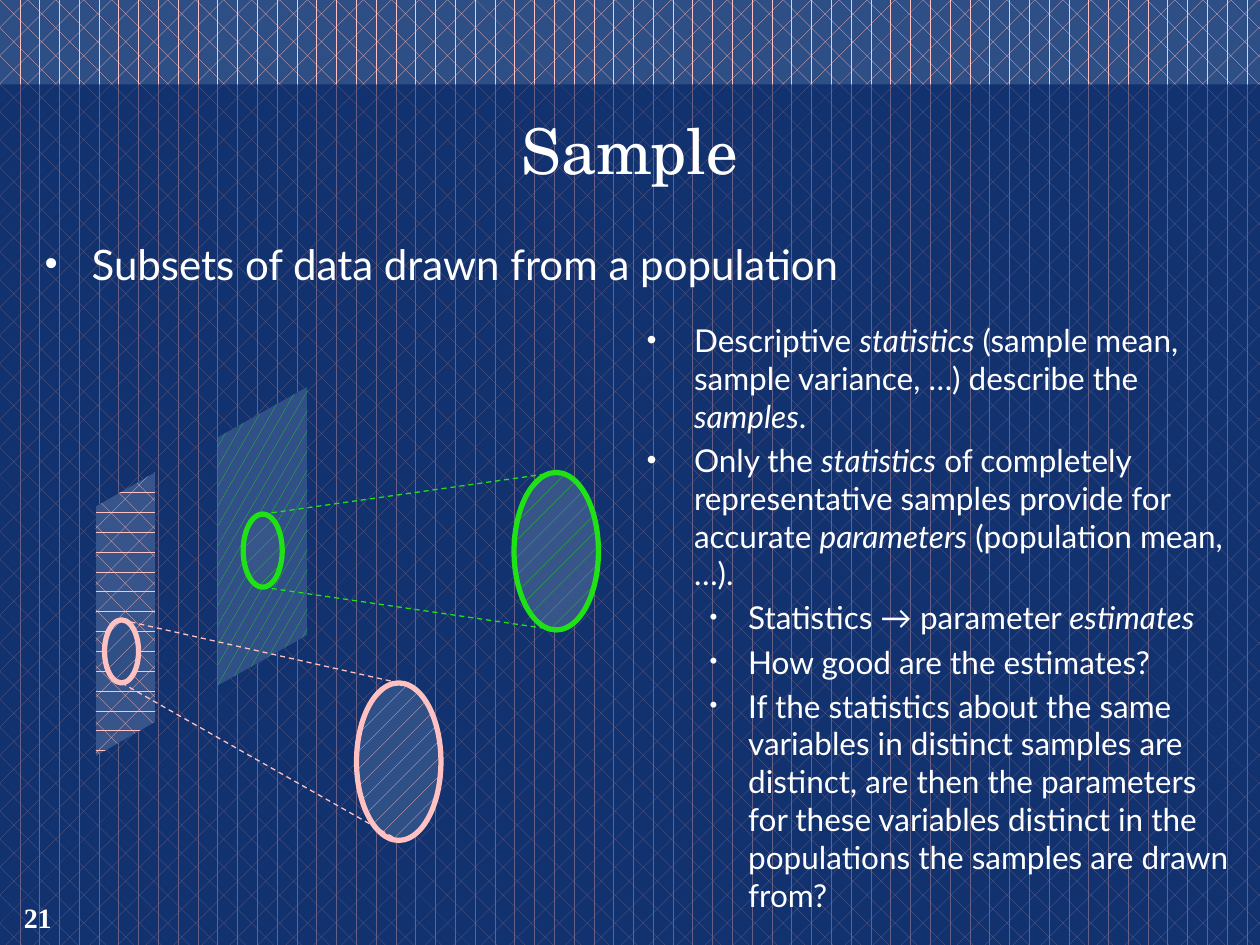
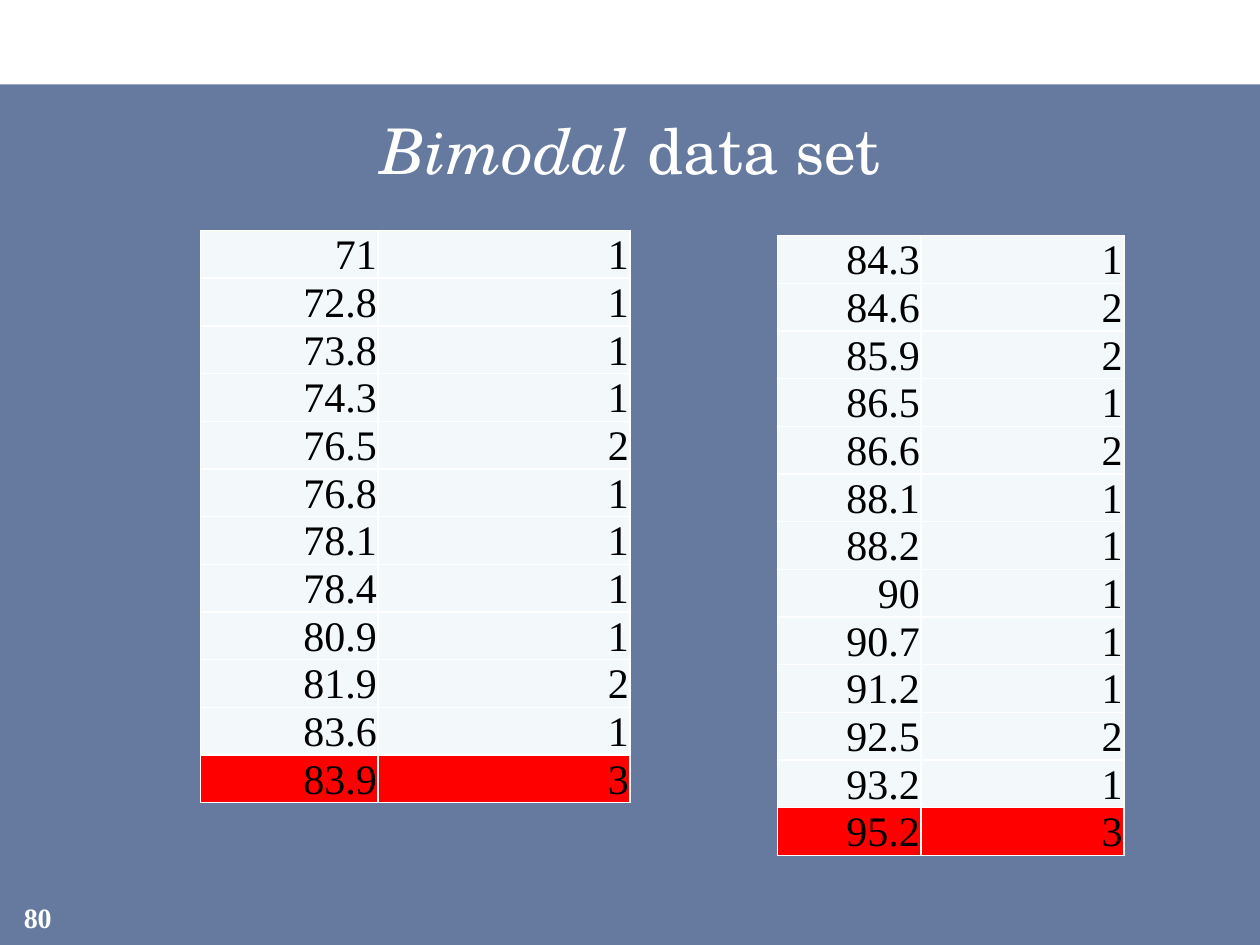
from dataclasses import dataclass

import lxml.etree
import pptx
import pptx.dml.color
import pptx.enum.dml
import pptx.enum.shapes
import pptx.enum.text
import pptx.oxml.ns
import pptx.util

Inches = pptx.util.Inches
Pt = pptx.util.Pt
qn = pptx.oxml.ns.qn
Pattern = pptx.enum.dml.MSO_PATTERN
Align = pptx.enum.text.PP_ALIGN
Anchor = pptx.enum.text.MSO_ANCHOR


# Theme and content types
@dataclass(frozen=True)
class Theme:
    white: str = "FFFFFF"
    black: str = "000000"
    navy: str = "002060"
    backdrop: str = "2E4E86"
    pink: str = "FFC1C1"
    green: str = "1FE115"
    cell: str = "F3F9FA"
    mode: str = "FF0000"
    title_font: str = "TeX Gyre Schola"
    body_font: str = "Lato"
    number_font: str = "Times New Roman"
    title_size: int = 36
    lead_size: int = 24
    detail_size: int = 18
    number_size: int = 16


THEME = Theme()


@dataclass(frozen=True)
class Box:
    left: float
    top: float
    width: float
    height: float

    def emu(self) -> tuple:
        return tuple(Inches(v) for v in (self.left, self.top, self.width, self.height))

    @property
    def center(self) -> float:
        return self.left + self.width / 2

    @property
    def bottom(self) -> float:
        return self.top + self.height


@dataclass(frozen=True)
class PatternFill:
    pattern: object
    ink: str
    ground: str


@dataclass(frozen=True)
class Population:
    """A slanted plane whose right side is raised by `rise`."""
    box: Box
    rise: float
    fill: PatternFill


@dataclass(frozen=True)
class Sample:
    """A small oval on a plane and its enlargement."""
    drawn_from: Box
    enlarged: Box
    fill: PatternFill


@dataclass(frozen=True)
class Bullet:
    text: str
    level: int = 0


@dataclass(frozen=True)
class Frequencies:
    left: float
    top: float
    columns: tuple
    rows: tuple


# Formatting helpers
def rgb(color: str) -> pptx.dml.color.RGBColor:
    return pptx.dml.color.RGBColor.from_string(color)


def apply(target: object, formats: dict) -> None:
    for name, value in formats.items():
        setattr(target, name, value)


def fill_pattern(fill: object, style: PatternFill) -> None:
    fill.patterned()
    fill.pattern = style.pattern
    fill.fore_color.rgb = rgb(style.ink)
    fill.back_color.rgb = rgb(style.ground)


def add_runs(paragraph: object, text: str, font: str, size: float,
             color: str = THEME.white, bold: bool = False) -> None:
    """Write text; parts between asterisks are italic."""
    for index, part in enumerate(text.split("*")):
        if part:
            run = paragraph.add_run()
            run.text = part
            apply(run.font, {"name": font, "size": Pt(size), "bold": bold,
                             "italic": index % 2 == 1})
            run.font.color.rgb = rgb(color)


def add_frame(slide: object, box: Box, anchor: object) -> object:
    frame = slide.shapes.add_textbox(*box.emu()).text_frame
    apply(frame, {"word_wrap": True, "vertical_anchor": anchor})
    return frame


def add_label(slide: object, box: Box, text: str, font: str, size: float,
              bold: bool = False) -> None:
    paragraph = add_frame(slide, box, Anchor.MIDDLE).paragraphs[0]
    paragraph.alignment = Align.CENTER
    add_runs(paragraph, text, font, size, bold=bold)


# Indent, hanging indent and bullet size (percent) by level
BULLET_LEVELS = ((0.38, -0.38, 100), (0.81, -0.31, 80))


def add_bullets(slide: object, box: Box, bullets: tuple, size: float) -> None:
    frame = add_frame(slide, box, Anchor.TOP)
    for index, bullet in enumerate(bullets):
        paragraph = frame.add_paragraph() if index else frame.paragraphs[0]
        indent, hanging, percent = BULLET_LEVELS[bullet.level]
        paragraph.level = bullet.level
        properties = paragraph._p.get_or_add_pPr()
        properties.set("marL", str(Inches(indent)))
        properties.set("indent", str(Inches(hanging)))
        color = lxml.etree.SubElement(properties, qn("a:buClr"))
        lxml.etree.SubElement(color, qn("a:srgbClr"), val=THEME.white)
        lxml.etree.SubElement(properties, qn("a:buSzPct"), val=str(percent * 1000))
        lxml.etree.SubElement(properties, qn("a:buFont"), typeface=THEME.number_font)
        lxml.etree.SubElement(properties, qn("a:buChar"), char="•")
        if index:
            paragraph.space_before = Pt(size * 0.2)
        add_runs(paragraph, bullet.text, THEME.body_font, size)


# Shared slide parts
PANEL = Box(0, 0.67, 10, 6.83)
TITLE = Box(0.25, 0.77, 9.5, 0.83)
PAGE_NUMBER = Box(0, 7.08, 0.6, 0.4)


def add_base(deck: object, title: str, number: int) -> object:
    slide = deck.slides.add_slide(deck.slide_layouts[6])
    panel = slide.shapes.add_shape(pptx.enum.shapes.MSO_SHAPE.RECTANGLE, *PANEL.emu())
    panel.shadow.inherit = False
    panel.fill.solid()
    panel.fill.fore_color.rgb = rgb(THEME.navy)
    panel.line.fill.background()
    tint = panel.element.spPr.find(qn("a:solidFill")).find(qn("a:srgbClr"))
    lxml.etree.SubElement(tint, qn("a:alpha"), val="60000")
    add_label(slide, PAGE_NUMBER, str(number), THEME.number_font, THEME.number_size, True)
    add_label(slide, TITLE, title, THEME.title_font, THEME.title_size)
    return slide


# Sampling diagram
def add_population(slide: object, population: Population) -> None:
    box, rise = population.box, population.rise
    right = box.left + box.width
    corners = ((box.left, box.top + rise), (right, box.top),
               (right, box.bottom - rise), (box.left, box.bottom))
    points = [(Inches(x), Inches(y)) for x, y in corners]
    builder = slide.shapes.build_freeform(*points[0])
    builder.add_line_segments(points[1:], close=True)
    plane = builder.convert_to_shape()
    plane.shadow.inherit = False
    fill_pattern(plane.fill, population.fill)
    plane.line.fill.background()


def add_oval(slide: object, box: Box, style: PatternFill) -> None:
    oval = slide.shapes.add_shape(pptx.enum.shapes.MSO_SHAPE.OVAL, *box.emu())
    oval.shadow.inherit = False
    fill_pattern(oval.fill, style)
    oval.line.color.rgb = rgb(style.ink)
    oval.line.width = Pt(3)


def add_projection(slide: object, sample: Sample) -> None:
    """Join the tops and the bottoms of the two ovals."""
    start, end = sample.drawn_from, sample.enlarged
    for start_y, end_y in ((start.top, end.top), (start.bottom, end.bottom)):
        ray = slide.shapes.add_connector(
            pptx.enum.shapes.MSO_CONNECTOR.STRAIGHT, Inches(start.center),
            Inches(start_y), Inches(end.center), Inches(end_y))
        lxml.etree.SubElement(ray.element.spPr, qn("a:effectLst"))
        ray.line.color.rgb = rgb(sample.fill.ink)
        apply(ray.line, {"width": Pt(0.75), "dash_style": pptx.enum.dml.MSO_LINE.DASH})


POPULATIONS = (
    Population(Box(0.76, 3.75, 0.47, 2.25), 0.27,
               PatternFill(Pattern.DIVOT, THEME.pink, "37558A")),
    Population(Box(1.73, 3.07, 0.71, 2.37), 0.4,
               PatternFill(Pattern.SMALL_CONFETTI, THEME.green, "305087")),
)
SAMPLES = (
    Sample(Box(0.83, 4.92, 0.27, 0.5), Box(2.83, 5.42, 0.67, 1.25),
           PatternFill(Pattern.PERCENT_5, THEME.pink, "2F4F87")),
    Sample(Box(1.93, 4.08, 0.31, 0.58), Box(4.08, 3.75, 0.67, 1.25),
           PatternFill(Pattern.PERCENT_5, THEME.green, "38558A")),
)
DEFINITION = (Bullet("Subsets of data drawn from a population"),)
DETAILS = (
    Bullet("Descriptive *statistics* (sample mean, sample variance, …) describe "
           "the *samples*."),
    Bullet("Only the *statistics* of completely representative samples provide for "
           "accurate *parameters* (population mean, …)."),
    Bullet("Statistics → parameter *estimates*", 1),
    Bullet("How good are the estimates?", 1),
    Bullet("If the statistics about the same variables in distinct samples are "
           "distinct, are then the parameters for these variables distinct in the "
           "populations the samples are drawn from?", 1),
)


def build_sample_slide(deck: object) -> None:
    slide = add_base(deck, "Sample", 21)
    fill_pattern(slide.background.fill,
                 PatternFill(Pattern.DIVOT, THEME.pink, THEME.backdrop))
    add_bullets(slide, Box(0.25, 1.84, 9.5, 5.42), DEFINITION, THEME.lead_size)
    for population in POPULATIONS:
        add_population(slide, population)
    for sample in SAMPLES:
        add_oval(slide, sample.enlarged, sample.fill)
        add_oval(slide, sample.drawn_from, sample.fill)
    for sample in SAMPLES:
        add_projection(slide, sample)
    add_bullets(slide, Box(5.03, 2.5, 4.88, 4.92), DETAILS, THEME.detail_size)


# Frequency tables
ROW_HEIGHT = 0.37
CELL_FORMAT = {"margin_left": Inches(0.01), "margin_right": Inches(0.01),
               "margin_top": Inches(0.01), "margin_bottom": 0,
               "vertical_anchor": Anchor.BOTTOM}
VALUE_FORMAT = {"alignment": Align.RIGHT, "line_spacing": 0.92}
FREQUENCIES = (
    Frequencies(1.59, 1.83, (1.41, 2.0), (
        (71, 1), (72.8, 1), (73.8, 1), (74.3, 1), (76.5, 2), (76.8, 1),
        (78.1, 1), (78.4, 1), (80.9, 1), (81.9, 2), (83.6, 1), (83.9, 3))),
    Frequencies(6.17, 1.87, (1.14, 1.61), (
        (84.3, 1), (84.6, 2), (85.9, 2), (86.5, 1), (86.6, 2), (88.1, 1), (88.2, 1),
        (90, 1), (90.7, 1), (91.2, 1), (92.5, 2), (93.2, 1), (95.2, 3))),
)


def add_borders(cell: object) -> None:
    properties = cell._tc.get_or_add_tcPr()
    for side in ("lnL", "lnR", "lnT", "lnB"):
        border = lxml.etree.SubElement(properties, qn("a:" + side), w=str(Pt(1)))
        paint = lxml.etree.SubElement(border, qn("a:solidFill"))
        lxml.etree.SubElement(paint, qn("a:srgbClr"), val=THEME.white)


def add_frequencies(slide: object, data: Frequencies) -> None:
    box = Box(data.left, data.top, sum(data.columns), ROW_HEIGHT * len(data.rows))
    table = slide.shapes.add_table(len(data.rows), len(data.columns), *box.emu()).table
    apply(table, {"first_row": False, "horz_banding": False})
    for column, width in zip(table.columns, data.columns):
        column.width = Inches(width)
    highest = max(count for _, count in data.rows)
    for row, values in zip(table.rows, data.rows):
        row.height = Inches(ROW_HEIGHT)
        for cell, value in zip(row.cells, values):
            apply(cell, CELL_FORMAT)
            add_borders(cell)
            cell.fill.solid()
            cell.fill.fore_color.rgb = rgb(THEME.mode if values[1] == highest else THEME.cell)
            paragraph = cell.text_frame.paragraphs[0]
            apply(paragraph, VALUE_FORMAT)
            add_runs(paragraph, str(value), THEME.number_font, THEME.lead_size, THEME.black)


def build_bimodal_slide(deck: object) -> None:
    slide = add_base(deck, "*Bimodal* data set", 80)
    slide.background.fill.solid()
    slide.background.fill.fore_color.rgb = rgb(THEME.white)
    for data in FREQUENCIES:
        add_frequencies(slide, data)


def main() -> None:
    deck = pptx.Presentation()
    apply(deck, {"slide_width": Inches(10), "slide_height": Inches(7.5)})
    build_sample_slide(deck)
    build_bimodal_slide(deck)
    deck.save("out.pptx")


if __name__ == "__main__":
    main()
